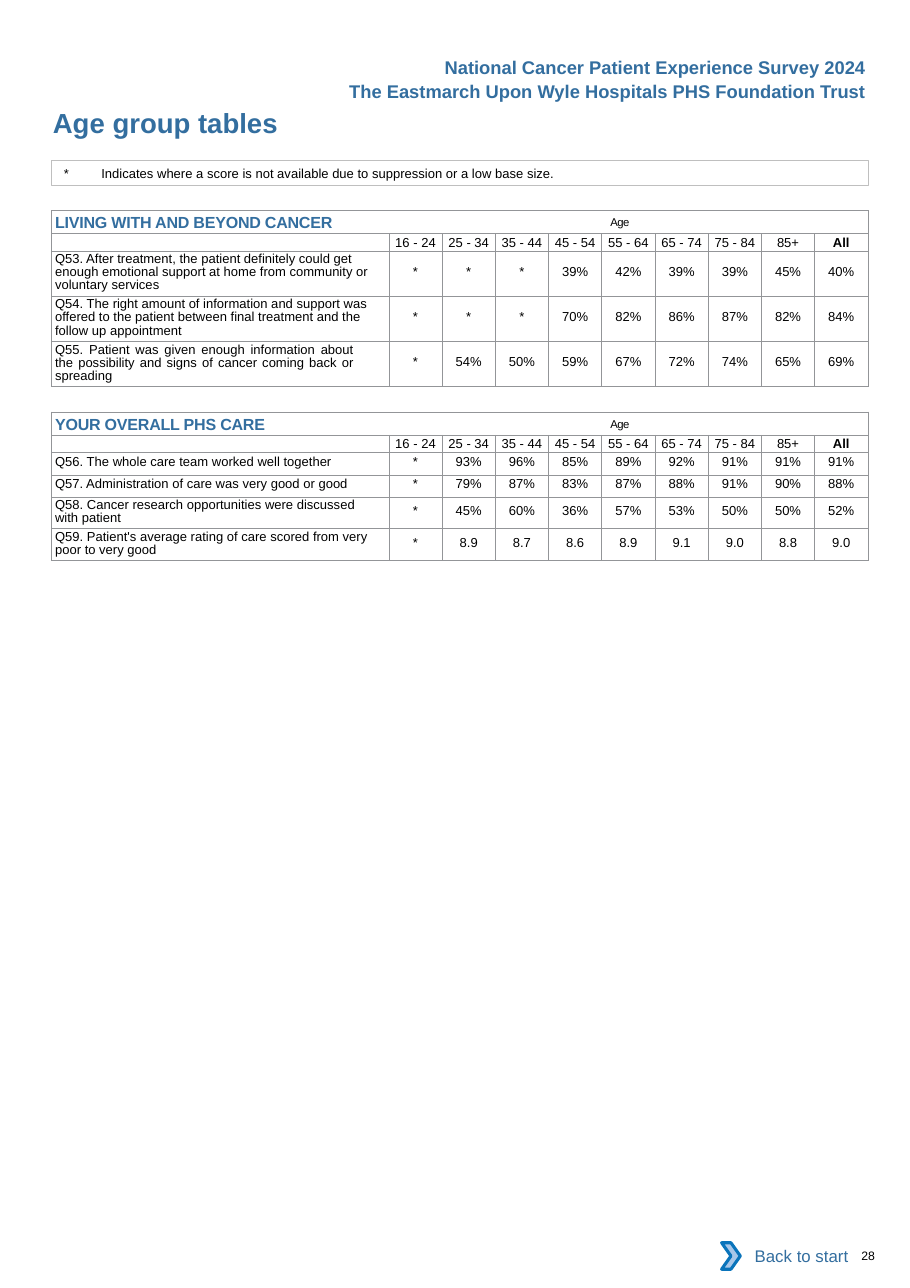
from pptx import Presentation
from pptx.dml.color import RGBColor
from pptx.enum.shapes import MSO_SHAPE
from pptx.enum.text import MSO_ANCHOR, MSO_AUTO_SIZE, PP_ALIGN
from pptx.oxml.xmlchemy import OxmlElement
from pptx.util import Inches, Pt

BLUE = RGBColor(0x33, 0x6E, 0x9F)
BLACK = RGBColor(0, 0, 0)
WHITE = RGBColor(0xFF, 0xFF, 0xFF)
GRID = RGBColor(0x93, 0x95, 0x98)
NOTE_LINE = RGBColor(0xBF, 0xBF, 0xBF)
CHEVRON_FILL = RGBColor(0xA8, 0xC7, 0xE9)
CHEVRON_LINE = RGBColor(0x0A, 0x74, 0xBB)

LEFT, WIDTH = 0.47, 7.41
LABEL_WIDTH = 3.06
HEADINGS = ["16 - 24", "25 - 34", "35 - 44", "45 - 54", "55 - 64",
            "65 - 74", "75 - 84", "85+", "All"]

LIVING_ROWS = [
    ("Q53. After treatment, the patient definitely could get enough emotional "
     "support at home from community or voluntary services",
     "* * * 39% 42% 39% 39% 45% 40%", 0.41),
    ("Q54. The right amount of information and support was offered to the "
     "patient between final treatment and the follow up appointment",
     "* * * 70% 82% 86% 87% 82% 84%", 0.41),
    ("Q55. Patient was given enough information about the possibility and "
     "signs of cancer coming back or spreading",
     "* 54% 50% 59% 67% 72% 74% 65% 69%", 0.41),
]
OVERALL_ROWS = [
    ("Q56. The whole care team worked well together",
     "* 93% 96% 85% 89% 92% 91% 91% 91%", 0.2),
    ("Q57. Administration of care was very good or good",
     "* 79% 87% 83% 87% 88% 91% 90% 88%", 0.2),
    ("Q58. Cancer research opportunities were discussed with patient",
     "* 45% 60% 36% 57% 53% 50% 50% 52%", 0.29),
    ("Q59. Patient's average rating of care scored from very poor to very good",
     "* 8.9 8.7 8.6 8.9 9.1 9.0 8.8 9.0", 0.29),
]
VALUE_TOP = {0.41: 0.12, 0.29: 0.06, 0.2: 0.02}


def style_font(font, size, color=BLACK, bold=False):
    font.name = "Arial"
    font.size = Pt(size)
    font.bold = bold
    font.color.rgb = color


def set_margins(frame, left=0, top=0, right=0, bottom=0):
    frame.margin_left, frame.margin_top = Inches(left), Inches(top)
    frame.margin_right, frame.margin_bottom = Inches(right), Inches(bottom)


def add_tab_stop(p, position):
    tabs = OxmlElement("a:tabLst")
    tab = OxmlElement("a:tab")
    tab.set("pos", str(Inches(position)))
    tab.set("algn", "l")
    tabs.append(tab)
    p._p.get_or_add_pPr().append(tabs)


def write(p, text, size, color=BLACK, bold=False, align=PP_ALIGN.LEFT):
    p.text = text
    p.alignment = align
    style_font(p.font, size, color, bold)


def add_text(s, box, text, size, color=BLACK, bold=False, align=PP_ALIGN.LEFT):
    sp = s.shapes.add_textbox(*map(Inches, box))
    sp.text_frame.word_wrap = False
    write(sp.text_frame.paragraphs[0], text, size, color, bold, align)
    return sp.text_frame


def add_box(shapes, kind, box, fill=None, line=None, line_width=0.5):
    sp = shapes.add_shape(kind, *map(Inches, box))
    sp.shadow.inherit = False
    if fill is None:
        sp.fill.background()
    else:
        sp.fill.solid()
        sp.fill.fore_color.rgb = fill
    if line is None:
        sp.line.fill.background()
    else:
        sp.line.color.rgb = line
        sp.line.width = Pt(line_width)
    sp.text_frame.vertical_anchor = MSO_ANCHOR.MIDDLE
    return sp


def add_borders(cell):
    tcPr = cell._tc.get_or_add_tcPr()
    for side in ("lnL", "lnR", "lnT", "lnB"):
        ln = OxmlElement(f"a:{side}")
        ln.set("w", str(Pt(0.5)))
        fill = OxmlElement("a:solidFill")
        color = OxmlElement("a:srgbClr")
        color.set("val", str(GRID))
        fill.append(color)
        ln.append(fill)
        tcPr.append(ln)


def fill_section_heading(cell, section):
    set_margins(cell, left=0.03)
    p = cell.text_frame.paragraphs[0]
    add_tab_stop(p, 5.04)
    r = p.add_run()
    r.text = section + "\t"
    style_font(r.font, 10.5, BLUE, True)
    r._r.get_or_add_rPr().set("spc", "-10")
    r = p.add_run()
    r.text = "Age"
    style_font(r.font, 12.8)
    rPr = r._r.get_or_add_rPr()
    rPr.set("baseline", "10000")
    rPr.set("spc", "-40")


def fill_label(cell, text, height):
    justified = text.startswith("Q55")
    set_margins(cell, left=0.03, top=0.02, right=0.32 if justified else 0.15)
    cell.vertical_anchor = MSO_ANCHOR.TOP
    p = cell.text_frame.paragraphs[0]
    write(p, text, 8.5, align=PP_ALIGN.JUSTIFY if justified else PP_ALIGN.LEFT)
    if height > 0.2:
        p.line_spacing = Pt(8.6)


def add_score_table(s, top, section, questions):
    heights = [0.21, 0.16] + [height for _, _, height in questions]
    columns = len(HEADINGS) + 1
    table = s.shapes.add_table(len(heights), columns, Inches(LEFT), Inches(top),
                               Inches(WIDTH), Inches(sum(heights))).table
    table.first_row = table.horz_banding = False
    for row, height in zip(table.rows, heights):
        row.height = Inches(height)
    for i, column in enumerate(table.columns):
        column.width = Inches((WIDTH - LABEL_WIDTH) / len(HEADINGS) if i else LABEL_WIDTH)
    for cell in table.iter_cells():
        add_borders(cell)
        cell.fill.background()
        set_margins(cell)
        cell.vertical_anchor = MSO_ANCHOR.MIDDLE
        cell.text_frame.paragraphs[0]._p.get_or_add_endParaRPr().set("sz", "850")

    table.cell(0, 0).merge(table.cell(0, columns - 1))
    fill_section_heading(table.cell(0, 0), section)
    for i, heading in enumerate(HEADINGS, 1):
        p = table.cell(1, i).text_frame.paragraphs[0]
        write(p, heading, 8.5, bold=heading == "All", align=PP_ALIGN.CENTER)
        p.line_spacing = Pt(9.9)
    for row, (question, scores, height) in enumerate(questions, 2):
        fill_label(table.cell(row, 0), question, height)
        for i, score in enumerate(scores.split(), 1):
            cell = table.cell(row, i)
            set_margins(cell, top=VALUE_TOP[height])
            cell.vertical_anchor = MSO_ANCHOR.TOP
            write(cell.text_frame.paragraphs[0], score, 8.5, align=PP_ALIGN.CENTER)


def add_title(s, text):
    title = s.shapes.title
    title.left, title.top, title.width, title.height = map(Inches, (LEFT, 0.96, 4.13, 0.3))
    tf = title.text_frame
    tf.auto_size = MSO_AUTO_SIZE.NONE
    tf.vertical_anchor = MSO_ANCHOR.TOP
    set_margins(tf, left=0.01)
    write(tf.paragraphs[0], text, 18, BLUE, True)


def add_note(s):
    sp = add_box(s.shapes, MSO_SHAPE.RECTANGLE, (LEFT, 1.46, WIDTH, 0.22), line=NOTE_LINE)
    set_margins(sp.text_frame, left=0.11)
    p = sp.text_frame.paragraphs[0]
    add_tab_stop(p, 0.34)
    write(p, "*\tIndicates where a score is not available due to suppression "
             "or a low base size.", 8.5)


def add_back_button(s):
    group = s.shapes.add_group_shape()
    label = add_box(group.shapes, MSO_SHAPE.RECTANGLE, (6.62, 11.19, 1.18, 0.42), WHITE)
    label.text_frame.word_wrap = False
    write(label.text_frame.paragraphs[0], "Back to start", 11, BLUE, align=PP_ALIGN.RIGHT)
    add_box(group.shapes, MSO_SHAPE.CHEVRON, (6.55, 11.28, 0.17, 0.24),
            CHEVRON_FILL, CHEVRON_LINE, 2)


def main():
    prs = Presentation()
    prs.slide_width, prs.slide_height = Inches(8.26), Inches(11.69)
    s = prs.slides.add_slide(prs.slide_layouts[5])
    add_title(s, "Age group tables")
    add_score_table(s, 1.91, "LIVING WITH AND BEYOND CANCER", LIVING_ROWS)
    add_score_table(s, 3.74, "YOUR OVERALL PHS CARE", OVERALL_ROWS)
    add_note(s)
    add_text(s, (3.03, 0.68, 4.93, 0.3),
             "The Eastmarch Upon Wyle Hospitals PHS Foundation Trust",
             12, BLUE, True, PP_ALIGN.RIGHT)
    add_text(s, (3.92, 0.46, 4.04, 0.3), "National Cancer Patient Experience Survey 2024",
             12, BLUE, True, PP_ALIGN.RIGHT)
    add_back_button(s)
    page_number = add_text(s, (7.72, 11.33, 0.51, 0.13), "28", 8)
    page_number.word_wrap = True
    set_margins(page_number, left=0.1)
    prs.save("out.pptx")


if __name__ == "__main__":
    main()
